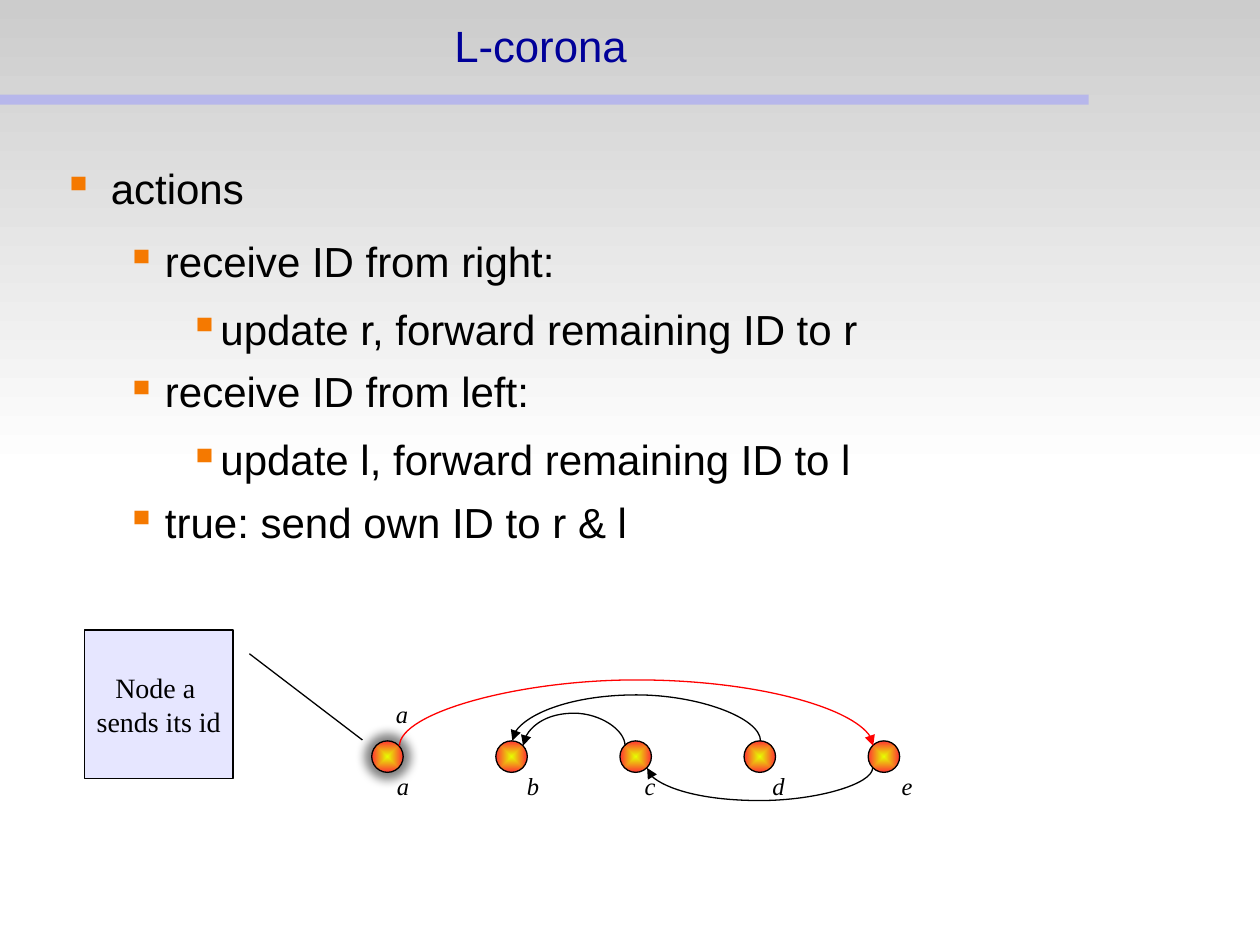
from dataclasses import dataclass

from lxml.etree import SubElement
from pptx import Presentation
from pptx.dml.color import RGBColor
from pptx.enum.shapes import MSO_CONNECTOR, MSO_SHAPE
from pptx.enum.text import MSO_ANCHOR, PP_ALIGN
from pptx.oxml.ns import qn
from pptx.util import Emu, Inches, Pt

CELL = Inches(0.5)
COLUMNS, ROWS = 20, 15
BLACK = RGBColor(0x00, 0x00, 0x00)
WHITE = RGBColor(0xFF, 0xFF, 0xFF)
GREY = RGBColor(0xCC, 0xCC, 0xCC)
NAVY = RGBColor(0x00, 0x00, 0x99)
PERIWINKLE = RGBColor(0x99, 0x99, 0xFF)
LAVENDER = RGBColor(0xE6, 0xE6, 0xFF)
YELLOW = RGBColor(0xE6, 0xFF, 0x00)
CORAL = RGBColor(0xFF, 0x33, 0x33)
RED = RGBColor(0xFF, 0x00, 0x00)
ORANGE = "F57900"

TITLE_FONT = {"name": "Arial", "size": Pt(25), "color": NAVY}
BODY_FONT = {"name": "Arial", "size": Pt(24), "color": BLACK}
CALLOUT_FONT = {"name": "Times New Roman", "size": Pt(16), "color": BLACK}
LABEL_FONT = {"name": "Times New Roman", "size": Pt(14), "italic": True, "color": BLACK}
CENTRED = {"alignment": PP_ALIGN.CENTER}
NO_MARGINS = {"margin_left": 0, "margin_right": 0, "margin_top": 0, "margin_bottom": 0}

NODE_COLUMN, NODE_ROW, NODE_STEP, NODE_SIZE = 5.9, 11.76, 1.97, 0.5
ARC_THICKNESS = Emu(1588)


@dataclass
class Area:
    column: float
    row: float
    columns: float
    rows: float

    def lengths(self) -> list:
        return [Emu(round(n * CELL)) for n in (self.column, self.row, self.columns, self.rows)]


@dataclass
class Bullet:
    level: int
    text: str


@dataclass
class Level:
    margin: float
    hanging: float
    space_after: float


@dataclass
class Arc:
    start: str
    start_site: int
    end: str
    end_site: int
    column: float
    row: float
    span: float
    bend: float
    turn: int
    flips: tuple
    color: RGBColor = BLACK


@dataclass
class Label:
    text: str
    column: float
    row: float = 12.14


LEVELS = [Level(0.38, 0.38, 14.2), Level(0.81, 0.31, 11.4), Level(1.25, 0.25, 8.5)]
BULLETS = [
    Bullet(0, "actions"),
    Bullet(1, "receive ID from right:"),
    Bullet(2, "update r, forward remaining ID to r"),
    Bullet(1, "receive ID from left:"),
    Bullet(2, "update l, forward remaining ID to l"),
    Bullet(1, "true: send own ID to r & l"),
]
LABELS = [
    Label("a", 6.1), Label("b", 8.16), Label("c", 10.02),
    Label("d", 12.06), Label("e", 14.1), Label("a", 6.08, 11),
]
ARCS = [
    Arc("a", 7, "e", 1, 10.1, 11.84, 7.52, 332.98, 90, ("flipH", "flipV"), RED),
    Arc("e", 3, "c", 5, 12.06, 12.19, 3.58, 165.04, 90, ()),
    Arc("d", 0, "b", 0, 10.1, 11.76, 3.94, 231.93, 270, ("flipV",)),
    Arc("c", 1, "b", 7, 9.11, 11.84, 1.62, 165.04, 270, ("flipV",)),
]


def apply(target, values: dict) -> None:
    for name, value in values.items():
        if name == "color":
            target.color.rgb = value
        else:
            setattr(target, name, value)


def write(para, text: str, font: dict, layout: dict) -> None:
    para.text = text
    apply(para, layout)
    for span in para.runs:
        apply(span.font, font)


def add_text(page, area: Area, text: str, font: dict, frame: dict):
    box = page.shapes.add_textbox(*area.lengths())
    apply(box.text_frame, frame)
    write(box.text_frame.paragraphs[0], text, font, CENTRED)
    return box


def add_figure(page, kind, area: Area, outline=None):
    figure = page.shapes.add_shape(kind, *area.lengths())
    figure.shadow.inherit = False
    if outline is None:
        figure.line.fill.background()
    else:
        figure.line.color.rgb = outline
        figure.line.width = Pt(0.75)
    return figure


def fill_gradient(figure, first: RGBColor, last: RGBColor, centred: bool) -> None:
    figure.fill.gradient()
    for stop, color in zip(figure.fill.gradient_stops, (first, last)):
        stop.color.rgb = color
    figure.fill.gradient_angle = 270
    if centred:
        gradient = figure._element.spPr.find(qn("a:gradFill"))
        gradient.remove(gradient.find(qn("a:lin")))
        route = SubElement(gradient, qn("a:path"), path="shape")
        SubElement(route, qn("a:fillToRect"), l="50000", t="50000", r="50000", b="50000")


def add_glow(figure) -> None:
    effects = figure._element.spPr.find(qn("a:effectLst"))
    shadow = SubElement(effects, qn("a:outerShdw"), blurRad=str(Inches(0.08)), dist="0",
                        sx="140000", sy="140000", algn="ctr", rotWithShape="0")
    color = SubElement(shadow, qn("a:srgbClr"), val="000000")
    SubElement(color, qn("a:alpha"), val="50000")


def add_bullets(page, area: Area) -> None:
    box = page.shapes.add_textbox(*area.lengths())
    apply(box.text_frame, {**NO_MARGINS, "margin_top": Inches(0.02), "word_wrap": True})
    for index, bullet in enumerate(BULLETS):
        para = box.text_frame.add_paragraph() if index else box.text_frame.paragraphs[0]
        level = LEVELS[bullet.level]
        write(para, bullet.text, BODY_FONT, {
            "level": bullet.level, "line_spacing": 0.95, "space_after": Pt(level.space_after)})
        settings = para._p.get_or_add_pPr()
        settings.set("marL", str(Inches(level.margin)))
        settings.set("indent", str(-Inches(level.hanging)))
        color = SubElement(settings, qn("a:buClr"))
        SubElement(color, qn("a:srgbClr"), val=ORANGE)
        SubElement(settings, qn("a:buChar"), char="▪")


def add_arc(page, arc: Arc, nodes: dict) -> None:
    connector = page.shapes.add_connector(MSO_CONNECTOR.CURVE, 0, 0, 0, 0)
    connector._connect_begin_to(nodes[arc.start], arc.start_site)
    connector._connect_end_to(nodes[arc.end], arc.end_site)
    left, top, _, height = Area(arc.column, arc.row - arc.span / 2, 0, arc.span).lengths()
    apply(connector, {"left": left, "top": top, "width": ARC_THICKNESS, "height": height})
    apply(connector.line, {"color": arc.color, "width": Pt(0.75)})
    properties = connector._element.spPr
    frame = properties.find(qn("a:xfrm"))
    frame.set("rot", str(arc.turn * 60000))
    for flip in arc.flips:
        frame.set(flip, "1")
    guides = properties.find(qn("a:prstGeom")).find(qn("a:avLst"))
    SubElement(guides, qn("a:gd"), name="adj1", fmla=f"val {round(arc.bend * 100000)}")
    SubElement(properties.find(qn("a:ln")), qn("a:tailEnd"), type="triangle")
    SubElement(properties, qn("a:effectLst"))


def add_heading(page) -> None:
    backdrop = add_figure(page, MSO_SHAPE.ROUNDED_RECTANGLE, Area(0, 0, COLUMNS, ROWS / 2))
    backdrop.adjustments[0] = 0
    fill_gradient(backdrop, GREY, WHITE, False)
    rule = add_figure(page, MSO_SHAPE.RECTANGLE, Area(0, 1.5, 17.28, 0.16))
    rule.fill.solid()
    rule.fill.fore_color.rgb = PERIWINKLE
    color = rule._element.spPr.find(qn("a:solidFill"))[0]
    SubElement(color, qn("a:alpha"), val="50000")
    title = add_text(page, Area(0, 0, 17.16, 1.5), "L-corona", TITLE_FONT, {
        **NO_MARGINS, "word_wrap": True, "vertical_anchor": MSO_ANCHOR.MIDDLE})
    title.text_frame.paragraphs[0].line_spacing = 0.98


def add_callout(page) -> None:
    callout = add_figure(page, MSO_SHAPE.LINE_CALLOUT_1, Area(1.34, 10, 2.36, 2.36), BLACK)
    for index, value in enumerate((0.16, 1.11, 0.74, 1.87)):
        callout.adjustments[index] = value
    callout.fill.solid()
    callout.fill.fore_color.rgb = LAVENDER
    apply(callout.text_frame, {"word_wrap": False, "vertical_anchor": MSO_ANCHOR.MIDDLE})
    write(callout.text_frame.paragraphs[0], "Node a \vsends its id", CALLOUT_FONT, CENTRED)


def add_network(page) -> None:
    nodes = {}
    for index, name in enumerate("abcde"):
        area = Area(NODE_COLUMN + index * NODE_STEP, NODE_ROW, NODE_SIZE, NODE_SIZE)
        nodes[name] = add_figure(page, MSO_SHAPE.OVAL, area, BLACK)
        fill_gradient(nodes[name], YELLOW, CORAL, True)
    add_glow(nodes["a"])
    for arc in ARCS:
        add_arc(page, arc, nodes)
    for label in LABELS:
        add_text(page, Area(label.column, label.row, 0.6, 0.68), label.text, LABEL_FONT,
                 {"word_wrap": False})


def main() -> None:
    deck = Presentation()
    apply(deck, {"slide_width": COLUMNS * CELL, "slide_height": ROWS * CELL})
    page = deck.slides.add_slide(deck.slide_layouts[6])
    add_heading(page)
    add_callout(page)
    add_network(page)
    add_bullets(page, Area(1, 2.6, 18, 9.9))
    deck.save("out.pptx")


if __name__ == "__main__":
    main()
